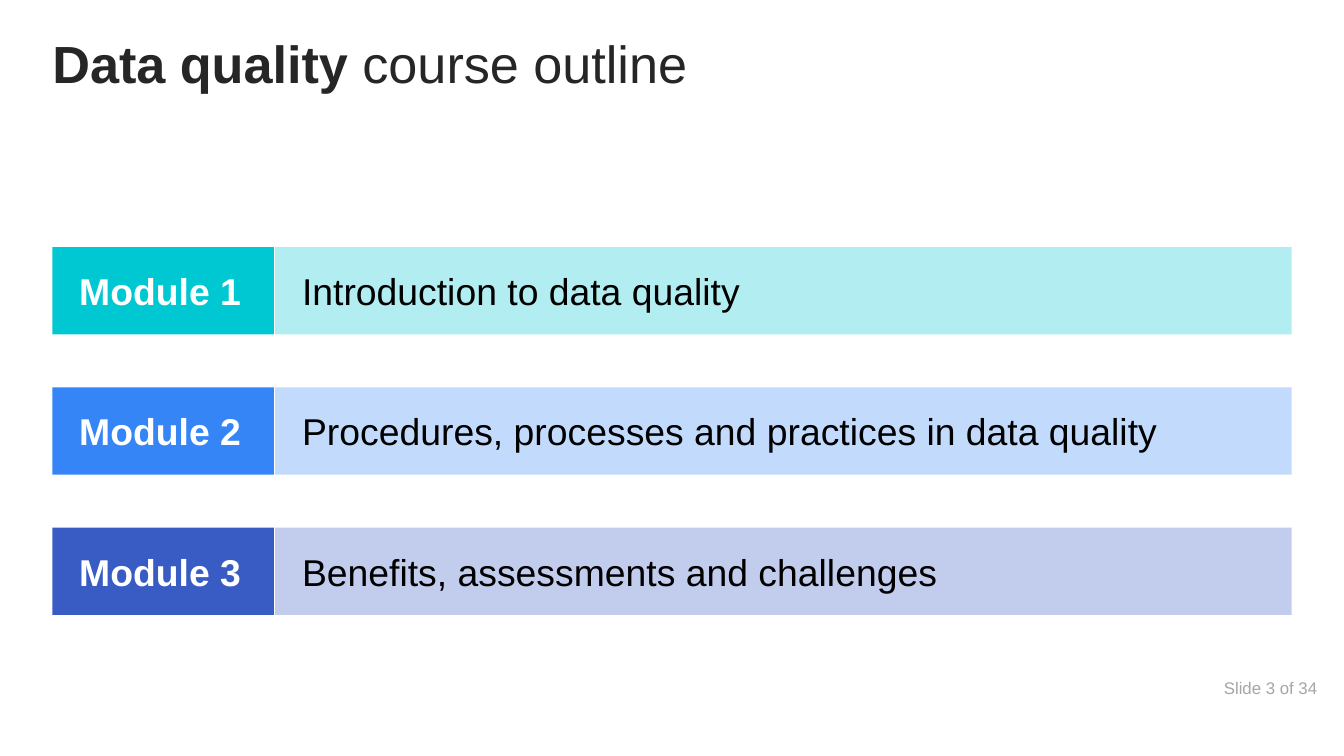
from lxml.etree import SubElement
from pptx import Presentation
from pptx.dml.color import RGBColor
from pptx.enum.shapes import MSO_SHAPE as Shape
from pptx.enum.text import MSO_ANCHOR as Anchor, PP_ALIGN as Align
from pptx.oxml.ns import qn
from pptx.util import Inches, Pt

WHITE = RGBColor(0xFF, 0xFF, 0xFF)
BLACK = RGBColor(0x00, 0x00, 0x00)
CHARCOAL = RGBColor(0x26, 0x26, 0x26)
GRAY = RGBColor(0xA6, 0xA6, 0xA6)
TURQUOISE = RGBColor(0x00, 0xC8, 0xD2)
BLUE = RGBColor(0x36, 0x85, 0xF7)
INDIGO = RGBColor(0x38, 0x5C, 0xC4)

MODULES = [
    ("Introduction to data quality", TURQUOISE),
    ("Procedures, processes and practices in data quality", BLUE),
    ("Benefits, assessments and challenges", INDIGO),
]
LABEL_LEFT, LABEL_WIDTH = 0.39, 1.65
TOPIC_LEFT, TOPIC_WIDTH = 2.05, 7.57
FIRST_TOP, LAST_TOP, BAR_HEIGHT = 1.84, 3.93, 0.65
BAR_PITCH = (LAST_TOP - FIRST_TOP) / (len(MODULES) - 1)
TINT_OPACITY = 30


def write_text(shape, *runs, size, color, insets, align=Align.LEFT, anchor=Anchor.TOP):
    """Fill a shape with one paragraph; each run is a (text, bold) pair."""
    frame = shape.text_frame
    frame.word_wrap = True
    frame.vertical_anchor = anchor
    left, top, right, bottom = (Inches(inset) for inset in insets)
    frame.margin_left, frame.margin_top = left, top
    frame.margin_right, frame.margin_bottom = right, bottom
    paragraph = frame.paragraphs[0]
    paragraph.alignment = align
    for text, bold in runs:
        run = paragraph.add_run()
        run.text = text
        run.font.name = "Arial"
        run.font.size = Pt(size)
        run.font.bold = bold
        run.font.color.rgb = color


def add_text_box(slide, left, top, width, height, *runs, **text_format):
    box = slide.shapes.add_textbox(
        Inches(left), Inches(top), Inches(width), Inches(height))
    write_text(box, *runs, **text_format)


def add_bar(slide, left, top, width, text, fill, color, bold=False, opacity=100):
    bar = slide.shapes.add_shape(
        Shape.RECTANGLE, Inches(left), Inches(top), Inches(width), Inches(BAR_HEIGHT))
    bar.shadow.inherit = False
    bar.line.fill.background()
    bar.fill.solid()
    bar.fill.fore_color.rgb = fill
    if opacity < 100:
        fill_color = bar.element.spPr.find(qn("a:solidFill")).find(qn("a:srgbClr"))
        SubElement(fill_color, qn("a:alpha")).set("val", str(opacity * 1000))
    write_text(bar, (text, bold), size=20, color=color,
               insets=(0.2, 0.16, 0.2, 0.16), anchor=Anchor.MIDDLE)


def main():
    presentation = Presentation()
    presentation.slide_width = Inches(10.01)
    presentation.slide_height = Inches(5.63)
    slide = presentation.slides.add_slide(presentation.slide_layouts[6])

    # Slide counter
    add_text_box(slide, 8.45, 4.97, 1.56, 0.55, ("Slide 3 of 34", False),
                 size=9, color=GRAY, insets=(0.39, 0.2, 0.2, 0.2), align=Align.RIGHT)

    # Title
    add_text_box(slide, 0, 0, 10.01, 1.19,
                 ("Data quality ", True), ("course outline", False),
                 size=28, color=CHARCOAL, insets=(0.39, 0.31, 0.39, 0.31))

    # Module rows: solid label and tinted topic
    for index, (topic, color) in enumerate(MODULES):
        top = FIRST_TOP + index * BAR_PITCH
        add_bar(slide, LABEL_LEFT, top, LABEL_WIDTH, f"Module {index + 1}",
                color, WHITE, bold=True)
        add_bar(slide, TOPIC_LEFT, top, TOPIC_WIDTH, topic,
                color, BLACK, opacity=TINT_OPACITY)

    presentation.save("out.pptx")


if __name__ == "__main__":
    main()
